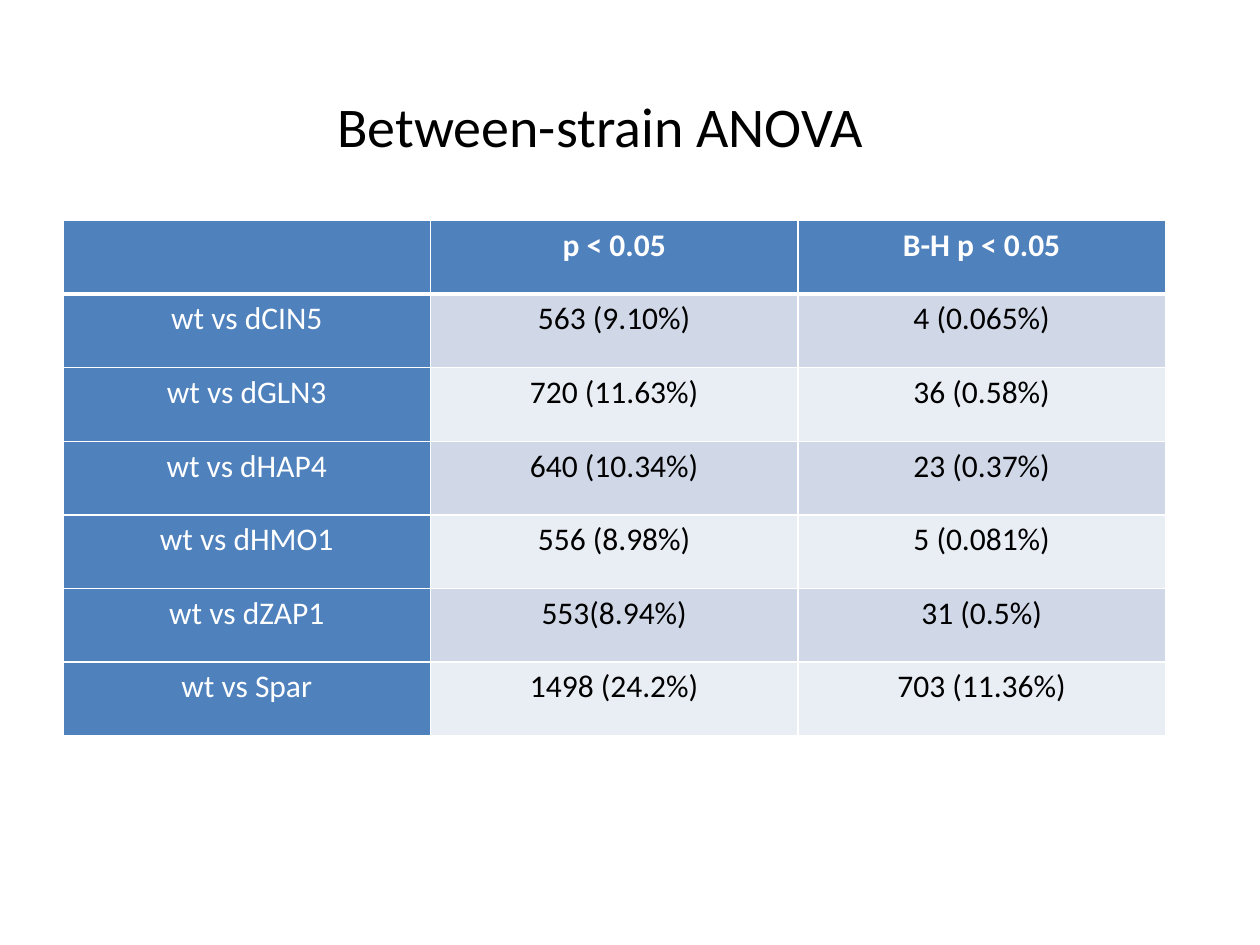
from dataclasses import dataclass

import pptx
import pptx.dml.color
import pptx.enum.text
import pptx.oxml.ns
import pptx.util
from lxml import etree

RGBColor = pptx.dml.color.RGBColor
WHITE = RGBColor(0xFF, 0xFF, 0xFF)
BLACK = RGBColor(0x00, 0x00, 0x00)
BLUE = RGBColor(0x4F, 0x81, 0xBD)
BAND_DARK = RGBColor(0xD0, 0xD8, 0xE8)
BAND_LIGHT = RGBColor(0xE9, 0xED, 0xF4)

FONT = "Calibri"
WIDTH, HEIGHT = pptx.util.Inches(10), pptx.util.Inches(7.5)
SIDES = ("L", "R", "T", "B")

ROWS = [
    ("", "p < 0.05", "B-H p < 0.05"),
    ("wt vs dCIN5", "563 (9.10%)", "4 (0.065%)"),
    ("wt vs dGLN3", "720 (11.63%)", "36 (0.58%)"),
    ("wt vs dHAP4", "640 (10.34%)", "23 (0.37%)"),
    ("wt vs dHMO1", "556 (8.98%)", "5 (0.081%)"),
    ("wt vs dZAP1", "553(8.94%)", "31 (0.5%)"),
    ("wt vs Spar", "1498 (24.2%)", "703 (11.36%)"),
]


@dataclass(frozen=True)
class Box:
    """Place and size as shares of the slide."""
    left: float
    top: float
    width: float
    height: float

    def lengths(self) -> tuple[int, int, int, int]:
        return (int(self.left * WIDTH), int(self.top * HEIGHT),
                int(self.width * WIDTH), int(self.height * HEIGHT))


@dataclass(frozen=True)
class CellStyle:
    fill: RGBColor
    color: RGBColor
    bold: bool = False
    bottom: float = 1


def cell_style(row: int, col: int) -> CellStyle:
    if row == 0:
        return CellStyle(BLUE, WHITE, bold=True, bottom=3)
    if col == 0:
        return CellStyle(BLUE, WHITE)
    return CellStyle(BAND_DARK if row % 2 else BAND_LIGHT, BLACK)


def add_run(p, text: str, size: float, color: RGBColor, bold: bool = False) -> None:
    r = p.add_run()
    r.text = text
    r.font.name = FONT
    r.font.size = pptx.util.Pt(size)
    r.font.bold = bold
    r.font.color.rgb = color


def set_borders(cell, bottom: float) -> None:
    qn = pptx.oxml.ns.qn
    tc_pr = cell._tc.get_or_add_tcPr()
    for i, side in enumerate(SIDES):
        width = pptx.util.Pt(bottom if side == "B" else 1)
        ln = etree.Element(qn(f"a:ln{side}"), w=str(int(width)))
        fill = etree.SubElement(ln, qn("a:solidFill"))
        etree.SubElement(fill, qn("a:srgbClr"), val=str(WHITE))
        tc_pr.insert(i, ln)  # borders come before the cell fill


def fill_cell(cell, text: str, style: CellStyle) -> None:
    cell.fill.solid()
    cell.fill.fore_color.rgb = style.fill
    cell.margin_left = cell.margin_right = pptx.util.Inches(0.07)
    cell.margin_top = cell.margin_bottom = 0
    set_borders(cell, style.bottom)
    if text:
        p = cell.text_frame.paragraphs[0]
        p.alignment = pptx.enum.text.PP_ALIGN.CENTER
        p.line_spacing = 1.15
        add_run(p, text, 18, style.color, style.bold)


def add_results(s, box: Box) -> None:
    table = s.shapes.add_table(len(ROWS), len(ROWS[0]), *box.lengths()).table
    for i, row in enumerate(ROWS):
        for j, text in enumerate(row):
            fill_cell(table.cell(i, j), text, cell_style(i, j))


def add_title(s, box: Box, text: str) -> None:
    tf = s.shapes.add_textbox(*box.lengths()).text_frame
    tf.word_wrap = False
    tf.auto_size = pptx.enum.text.MSO_AUTO_SIZE.SHAPE_TO_FIT_TEXT
    add_run(tf.paragraphs[0], text, 32, BLACK)


def main() -> None:
    prs = pptx.Presentation()
    prs.slide_width, prs.slide_height = WIDTH, HEIGHT
    s = prs.slides.add_slide(prs.slide_layouts[6])

    # Table of strain comparisons
    add_results(s, Box(0.05, 1.75 / 7.5, 0.875, 4.09 / 7.5))
    # Heading
    add_title(s, Box(0.258, 0.09, 0.441, 0.085), "Between-strain ANOVA")

    prs.save("out.pptx")


if __name__ == "__main__":
    main()
